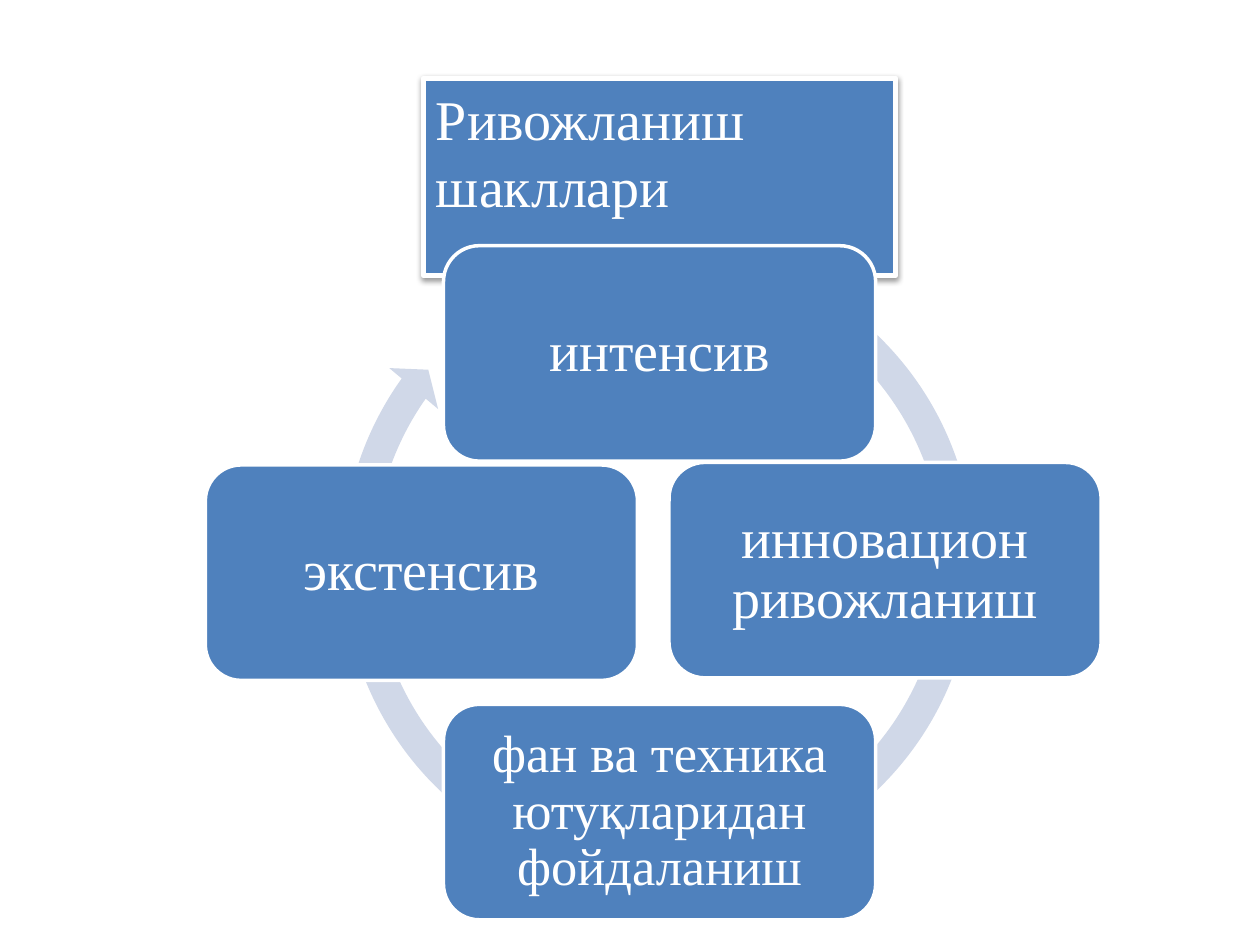
from lxml import etree
from pptx import Presentation
from pptx.dml.color import RGBColor
from pptx.enum.shapes import MSO_SHAPE as SHAPE
from pptx.enum.text import MSO_ANCHOR as ANCHOR, MSO_AUTO_SIZE as FIT, PP_ALIGN as ALIGN
from pptx.oxml.ns import qn
from pptx.util import Inches, Pt

TITLE = "Ривожланиш шакллари"
STAGES = [
    ("интенсив", 3.52, 1.95, "body"),
    ("инновацион ривожланиш", 5.31, 3.67, "body"),
    ("фан ва техника ютуқларидан фойдаланиш", 3.52, 5.59, "small"),
    ("экстенсив", 1.63, 3.69, "body"),
]
STAGE_SIZE = (3.43, 1.71)
TITLE_BOX = (3.36, 0.62, 3.75, 1.18)
RING_BOX = (2.59, 1.83, 5.27, 5.27)
RING_ADJ = (0.047, 2.729, 129.251, 179.672, 0.048)
THEME = {
    "font": "Times New Roman",
    "blue": RGBColor(0x4F, 0x81, 0xBD),
    "pale": RGBColor(0xD0, 0xD8, 0xE8),
    "white": RGBColor(0xFF, 0xFF, 0xFF),
    "body": Pt(32),
    "small": Pt(30),
}
MARGINS = ("margin_left", "margin_top", "margin_right", "margin_bottom")


def set_all(obj, values):
    for name, value in values.items():
        setattr(obj, name, value)


def paint(sp, fill, line_width=None):
    sp.fill.solid()
    sp.fill.fore_color.rgb = fill
    if line_width is None:
        sp.line.fill.background()
    else:
        sp.line.color.rgb = THEME["white"]
        sp.line.width = Pt(line_width)


def write(sp, text, size, frame, para):
    tf = sp.text_frame
    set_all(tf, {"word_wrap": True, **frame})
    p = tf.paragraphs[0]
    set_all(p, para)
    r = p.add_run()
    r.text = text
    set_all(r.font, {"name": THEME["font"], "size": THEME[size]})
    r.font.color.rgb = THEME["white"]


def add_shadow(sp, blur, dist, angle, opacity):
    effects = etree.SubElement(sp._element.spPr, qn("a:effectLst"))
    shadow = etree.SubElement(effects, qn("a:outerShdw"), {
        "blurRad": str(Pt(blur)), "dist": str(Pt(dist)),
        "dir": str(angle * 60000), "rotWithShape": "0"})
    color = etree.SubElement(shadow, qn("a:srgbClr"), val="000000")
    etree.SubElement(color, qn("a:alpha"), val=str(opacity * 1000))


def main():
    prs = Presentation()
    set_all(prs, {"slide_width": Inches(10), "slide_height": Inches(7.5)})
    s = prs.slides.add_slide(prs.slide_layouts[5])

    title = s.shapes.title
    set_all(title, dict(zip(("left", "top", "width", "height"), map(Inches, TITLE_BOX))))
    paint(title, THEME["blue"], 3)
    add_shadow(title, 3.1, 1.6, 90, 38)
    write(title, TITLE, "body",
          {"vertical_anchor": ANCHOR.TOP, "auto_size": FIT.SHAPE_TO_FIT_TEXT},
          {"alignment": ALIGN.LEFT})

    ring = s.shapes.add_shape(SHAPE.CIRCULAR_ARROW, *map(Inches, RING_BOX))
    for i, value in enumerate(RING_ADJ):
        ring.adjustments[i] = value
    paint(ring, THEME["pale"])
    ring.shadow.inherit = False

    for text, left, top, size in STAGES:
        sp = s.shapes.add_shape(SHAPE.ROUNDED_RECTANGLE,
                                *map(Inches, (left, top, *STAGE_SIZE)))
        paint(sp, THEME["blue"], 2)
        sp.shadow.inherit = False
        write(sp, text, size,
              {"vertical_anchor": ANCHOR.MIDDLE, **dict.fromkeys(MARGINS, Inches(0.13))},
              {"alignment": ALIGN.CENTER, "line_spacing": 0.9})

    prs.save("out.pptx")


if __name__ == "__main__":
    main()
